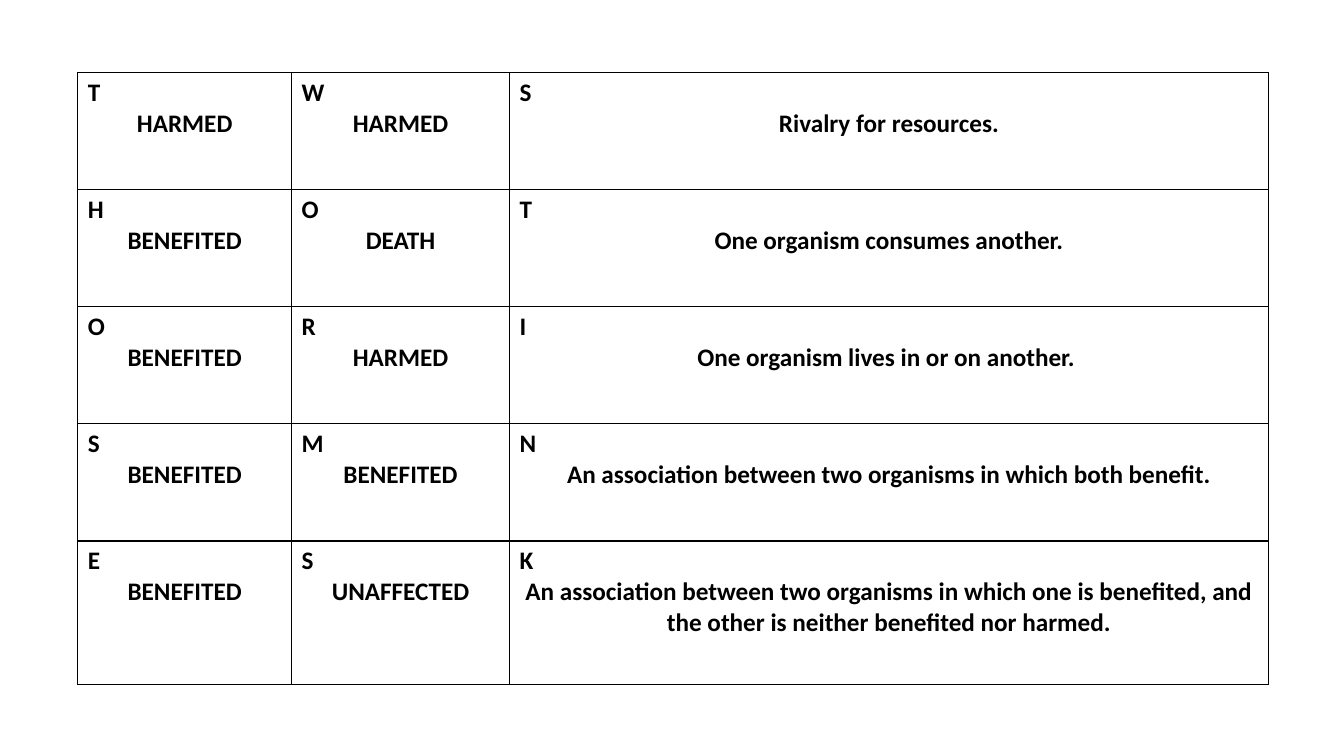
import lxml.etree
import pptx
import pptx.dml.color
import pptx.enum.text
import pptx.oxml.ns
import pptx.util


def color(value):
    return pptx.dml.color.RGBColor.from_string(value)


def add_borders(cell, value, width):
    properties = cell._tc.get_or_add_tcPr()
    for side in ("lnL", "lnR", "lnT", "lnB"):
        line = lxml.etree.SubElement(
            properties, pptx.oxml.ns.qn(f"a:{side}"), w=str(width)
        )
        fill = lxml.etree.SubElement(line, pptx.oxml.ns.qn("a:solidFill"))
        lxml.etree.SubElement(fill, pptx.oxml.ns.qn("a:srgbClr"), val=value)


column_widths = [5.39, 5.49, 19.13]
row_heights = [2.95, 2.95, 2.95, 2.95, 3.61]
column_letters = ["THOSE", "WORMS", "STINK"]
relationships = [
    ("HARMED", "HARMED", "Rivalry for resources."),
    ("BENEFITED", "DEATH", "One organism consumes another."),
    ("BENEFITED", "HARMED", "One organism lives in or on another. "),
    (
        "BENEFITED",
        "BENEFITED",
        "An association between two organisms in which both benefit.",
    ),
    (
        "BENEFITED",
        "UNAFFECTED",
        "An association between two organisms in which one is benefited, "
        "and the other is neither benefited nor harmed.",
    ),
]
text_format = {"name": "Calibri", "size": pptx.util.Pt(18), "bold": True}
alignments = [pptx.enum.text.PP_ALIGN.LEFT, pptx.enum.text.PP_ALIGN.CENTER]

presentation = pptx.Presentation()
presentation.slide_width = pptx.util.Cm(33.87)
presentation.slide_height = pptx.util.Cm(19.05)
slide = presentation.slides.add_slide(presentation.slide_layouts[6])

table = slide.shapes.add_table(
    len(row_heights),
    len(column_widths),
    pptx.util.Cm(1.96),
    pptx.util.Cm(1.83),
    pptx.util.Cm(sum(column_widths)),
    pptx.util.Cm(sum(row_heights)),
).table
table.first_row = False
table.horz_banding = False
for column, width in zip(table.columns, column_widths):
    column.width = pptx.util.Cm(width)
for row, height in zip(table.rows, row_heights):
    row.height = pptx.util.Cm(height)

for row_index, descriptions in enumerate(relationships):
    for column_index, description in enumerate(descriptions):
        cell = table.cell(row_index, column_index)
        add_borders(cell, "000000", pptx.util.Pt(1))
        cell.fill.background()
        letter = column_letters[column_index][row_index]
        cell.text = f"{letter}\n{description}"
        for paragraph, alignment in zip(cell.text_frame.paragraphs, alignments):
            paragraph.alignment = alignment
            font = paragraph.runs[0].font
            font.color.rgb = color("000000")
            for attribute, value in text_format.items():
                setattr(font, attribute, value)

presentation.save("out.pptx")
